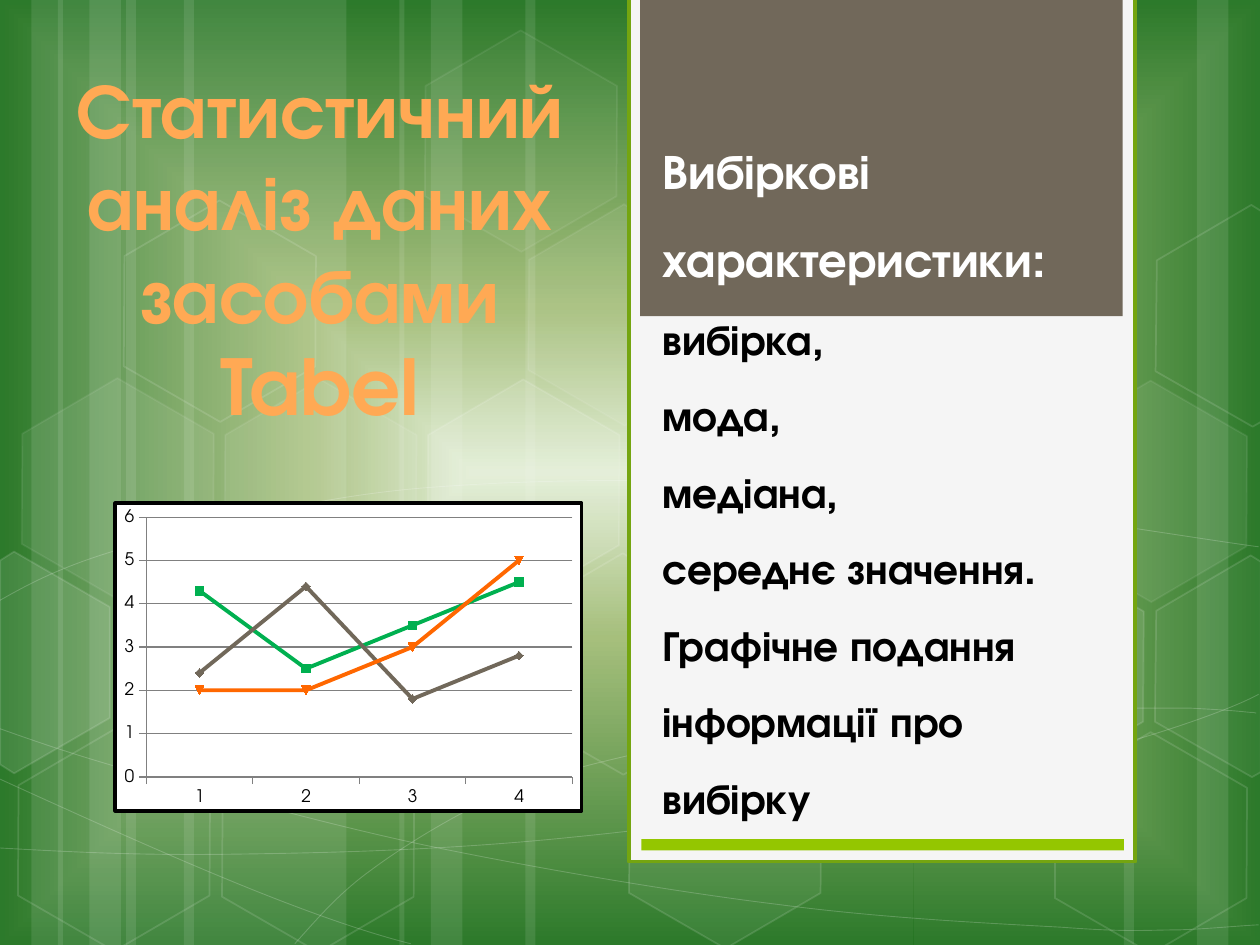
import math

import pptx
import pptx.chart.data
import pptx.dml.color
import pptx.enum.chart
import pptx.enum.shapes
import pptx.enum.text
import pptx.oxml.ns
import pptx.util
from lxml import etree

FONT = "TeX Gyre Adventor"
SHAPE = pptx.enum.shapes.MSO_SHAPE
qn = pptx.oxml.ns.qn


def px(n):
    """Turn px, 100 to the inch, into EMU."""
    return pptx.util.Emu(round(n * 9144))


def rgb(value):
    """Turn a hex string into a colour."""
    return pptx.dml.color.RGBColor.from_string(value)


def set_alpha(parent, percent):
    """Make the first colour under an element partly transparent."""
    color = next(parent.iter(qn("a:srgbClr")))
    etree.SubElement(color, qn("a:alpha")).set("val", str(percent * 1000))


def paint(sp, fill=None, alpha=100, line=None, width=1, line_alpha=100):
    """Set the fill and outline of a shape and drop its shadow."""
    sp.shadow.inherit = False
    spPr = sp._element.spPr
    if fill:
        sp.fill.solid()
        sp.fill.fore_color.rgb = rgb(fill)
        if alpha < 100:
            set_alpha(spPr.find(qn("a:solidFill")), alpha)
    else:
        sp.fill.background()
    if line:
        sp.line.color.rgb = rgb(line)
        sp.line.width = pptx.util.Pt(width)
        if line_alpha < 100:
            set_alpha(spPr.find(qn("a:ln")), line_alpha)
    else:
        sp.line.fill.background()


def add_preset(s, kind, x, y, w, h, **style):
    """Add a painted preset shape."""
    sp = s.shapes.add_shape(kind, px(x), px(y), px(w), px(h))
    paint(sp, **style)
    return sp


def add_outline(s, points, close, **style):
    """Add a painted freeform through the points."""
    points = [(px(x), px(y)) for x, y in points]
    builder = s.shapes.build_freeform(*points[0], scale=1.0)
    builder.add_line_segments(points[1:], close=close)
    sp = builder.convert_to_shape()
    paint(sp, **style)
    return sp


def set_gradient(fill, parent, stops):
    """Give a fill the gradient stops and return its element."""
    fill.gradient()
    grad = next(parent.iter(qn("a:gradFill")))
    stop_list = grad.find(qn("a:gsLst"))
    for stop in list(stop_list):
        stop_list.remove(stop)
    for pos, color in stops:
        stop = etree.SubElement(stop_list, qn("a:gs"), pos=str(pos * 1000))
        etree.SubElement(stop, qn("a:srgbClr"), val=color)
    return grad


def add_text(s, x, y, w, h):
    """Add an empty wrapping text box and return its frame."""
    tf = s.shapes.add_textbox(px(x), px(y), px(w), px(h)).text_frame
    tf.word_wrap = True
    return tf


def add_run(p, text, size, color=None):
    """Add a bold run to a paragraph."""
    r = p.add_run()
    r.text = text
    r.font.name, r.font.size, r.font.bold = FONT, pptx.util.Pt(size), True
    if color:
        r.font.color.rgb = rgb(color)
    return r


def backdrop(s):
    """Fill the slide with the green centred gradient."""
    stops = [(0, "DFECD1"), (35, "9CB86E"), (100, "156B13")]
    grad = set_gradient(s.background.fill, s._element, stops)
    grad.remove(grad.find(qn("a:lin")))
    shade = etree.SubElement(grad, qn("a:path"), path="shape")
    etree.SubElement(shade, qn("a:fillToRect"), dict.fromkeys("ltrb", "50000"))


def stripes(s, x, y, h):
    """Lay translucent vertical stripes over the backdrop."""
    bands = [(100, 175), (0, 50), (25, 83), (146, 175), (46, 50), (71, 83),
             (725, 175), (950, 50), (892, 83), (417, 308), (317, 50), (342, 83)]
    for left, w in bands:
        add_preset(s, SHAPE.RECTANGLE, x + left, y, w, h, fill="FFFFFF", alpha=10)


def bend(sp):
    """Turn each three straight segments of a freeform into one cubic curve."""
    lines = list(sp._element.iter(qn("a:lnTo")))
    for i in range(0, len(lines), 3):
        cubic = etree.Element(qn("a:cubicBezTo"))
        lines[i].addprevious(cubic)
        for line in lines[i:i + 3]:
            cubic.append(line[0])
            line.getparent().remove(line)


def waves(s, x, y):
    """Draw the thin translucent curves."""
    curves = [
        [(-1, 673), (53, 676), (107, 679), (182, 678), (257, 677), (349, 675), (449, 665),
         (550, 655), (692, 636), (783, 617), (875, 598), (968, 568), (999, 551)],
        [(-1, 477), (27, 461), (56, 446), (113, 431), (170, 416), (250, 394), (339, 387),
         (428, 380), (535, 379), (645, 387), (755, 395), (939, 426), (999, 434)],
        [(-3, 617), (118, 672), (239, 727), (326, 749)],
        [(-1, 578), (30, 589), (61, 600), (119, 616), (178, 631), (265, 656), (348, 673),
         (431, 690), (537, 708), (619, 718), (702, 729), (791, 733), (844, 736),
         (897, 740), (911, 738), (936, 738), (962, 737), (980, 735), (999, 734)],
        [(234, 749), (252, 729), (269, 709), (294, 691), (318, 673), (351, 653), (379, 639),
         (407, 625), (424, 619), (461, 609), (498, 599), (565, 585), (600, 578),
         (635, 571), (640, 571), (671, 569), (702, 566), (751, 563), (786, 562),
         (820, 561), (878, 562), (878, 562), (900, 562), (922, 562), (944, 562),
         (963, 563), (979, 564), (988, 565), (997, 566), (994, 565), (997, 566)],
    ]
    for points in curves:
        bend(add_outline(s, [(x + a, y + b) for a, b in points], False,
                         line="FFFFFF", width=0.5, line_alpha=20))


def hexagons(s, x, y):
    """Scatter the translucent hexagons, cut off at the slide edges."""
    whole = [(328, 313, 10, 12), (407, 451, 0, 12), (408, 174, 7, 8), (326, 36, 4, 8),
             (488, 589, 6, 12), (3, 591, 0, 12), (6, 312, 7, 8), (85, 451, 0, 12),
             (165, 592, 0, 12), (167, 313, 7, 8), (87, 171, 0, 12), (744, 453, 10, 12),
             (826, 593, 0, 12), (826, 314, 7, 8)]
    for left, top, alpha, line_alpha in whole:
        sp = add_preset(s, SHAPE.HEXAGON, x + left, y + top, 175, 152,
                        fill="FFFFFF" if alpha else None, alpha=alpha,
                        line="FFFFFF", line_alpha=line_alpha)
        sp.adjustments[0] = 0.285
        sp.rotation = 30
    right = [(918, 207), (993, 163), (1001, 168), (1001, 335), (994, 339), (917, 295)]
    left = [(0, 445), (11, 438), (87, 482), (87, 570), (11, 614), (0, 607)]
    cut = [(left, 27, 535, 10), ([(a, b + 278) for a, b in right], 976, 520, 4),
           (right, 976, 241, 0)]
    cos, sin = math.cos(math.radians(30)), math.sin(math.radians(30))
    for points, cx, cy, alpha in cut:
        upright = [(x + cx + (a - cx) * cos + (b - cy) * sin,
                    y + cy + (b - cy) * cos - (a - cx) * sin) for a, b in points]
        sp = add_outline(s, upright, True, fill="FFFFFF" if alpha else None,
                         alpha=alpha, line="FFFFFF", line_alpha=12)
        sp.rotation = 30


def topic_panel(s, x, y, w, h):
    """Build the right-hand panel with its list of topics."""
    add_preset(s, SHAPE.RECTANGLE, x, y, w, h, fill="F5F5F5", line="74A510", width=2)
    add_preset(s, SHAPE.RECTANGLE, x + 9, y, w - 19, 253, fill="71685A")
    add_preset(s, SHAPE.RECTANGLE, x + 10, y + h - 18, w - 19, 9, fill="94C600")
    tf = add_text(s, x + 17, y + 22, w - 40, h - 48)
    tf.vertical_anchor = pptx.enum.text.MSO_ANCHOR.BOTTOM
    p = tf.paragraphs[0]
    p.line_spacing = 1.5
    add_run(p, "Вибіркові характеристики:", 27.9, "FFFFFF")
    for text in ("вибірка,", "мода,", "медіана,",
                 "середнє значення. Графічне подання інформації про вибірку"):
        p.add_line_break()
        add_run(p, text, 24.3, "000000")


def heading(s, x, y, w, h):
    """Write the centred orange heading."""
    tf = add_text(s, x, y, w, h)
    tf.auto_size = pptx.enum.text.MSO_AUTO_SIZE.SHAPE_TO_FIT_TEXT
    stops = [(0, "FFAD60"), (25, "FFA954"), (50, "FC9A16"), (75, "FFA954"), (100, "FFAD60")]
    for i, text in enumerate(("Статистичний аналіз даних", "засобами Tabel")):
        p = tf.add_paragraph() if i else tf.paragraphs[0]
        p.alignment = pptx.enum.text.PP_ALIGN.CENTER
        r = add_run(p, text, 44)
        set_gradient(r.font.fill, r._r, stops)
        r.font.fill.gradient_angle = 90


def line_chart(s, x, y, w, h):
    """Add the framed chart of three lines."""
    rows = [("Series 1", (4.3, 2.5, 3.5, 4.5), "00B050"),
            ("Series 2", (2.4, 4.4, 1.8, 2.8), "71685A"),
            ("Series 3", (2, 2, 3, 5), "FF6700")]
    data = pptx.chart.data.CategoryChartData()
    data.categories = ["1", "2", "3", "4"]
    for name, values, _ in rows:
        data.add_series(name, values)
    kind = pptx.enum.chart.XL_CHART_TYPE.LINE_MARKERS
    chart = s.shapes.add_chart(kind, px(x), px(y), px(w), px(h), data).chart
    chart.has_legend = chart.has_title = False
    chart.font.name, chart.font.size = FONT, pptx.util.Pt(10)
    chart.font.color.rgb = rgb("000000")
    chart.plots[0].vary_by_categories = False
    for series, (_, _, color) in zip(chart.plots[0].series, rows):
        series.smooth = False
        series.format.line.color.rgb = rgb(color)
        series.format.line.width = pptx.util.Pt(2.25)
        series.marker.style = pptx.enum.chart.XL_MARKER_STYLE.AUTOMATIC
        series.marker.size = 5
        series.marker.format.fill.solid()
        series.marker.format.fill.fore_color.rgb = rgb(color)
    axis = chart.value_axis
    axis.minimum_scale, axis.maximum_scale, axis.major_unit = 0, 6, 1
    for part in (axis, chart.category_axis, axis.major_gridlines):
        part.format.line.color.rgb = rgb("808080")
    spPr = etree.Element(qn("c:spPr"))
    frame = etree.Element(qn("a:ln"), w=str(pptx.util.Pt(2)))
    for parent, color in ((spPr, "FFFFFF"), (frame, "000000")):
        fill = etree.SubElement(parent, qn("a:solidFill"))
        etree.SubElement(fill, qn("a:srgbClr"), val=color)
    spPr.append(frame)
    chart._chartSpace.find(qn("c:chart")).addnext(spPr)


def main():
    """Build and save the slide."""
    prs = pptx.Presentation()
    prs.slide_width, prs.slide_height = px(1000), px(750)
    s = prs.slides.add_slide(prs.slide_layouts[6])
    backdrop(s)
    stripes(s, 0, 0, 750)
    waves(s, 0, 0)
    hexagons(s, 0, 0)
    topic_panel(s, 499, -2, 402, 686)
    heading(s, 16, 44, 476, 306)
    line_chart(s, 90, 398, 373, 247)
    prs.save("out.pptx")


if __name__ == "__main__":
    main()
